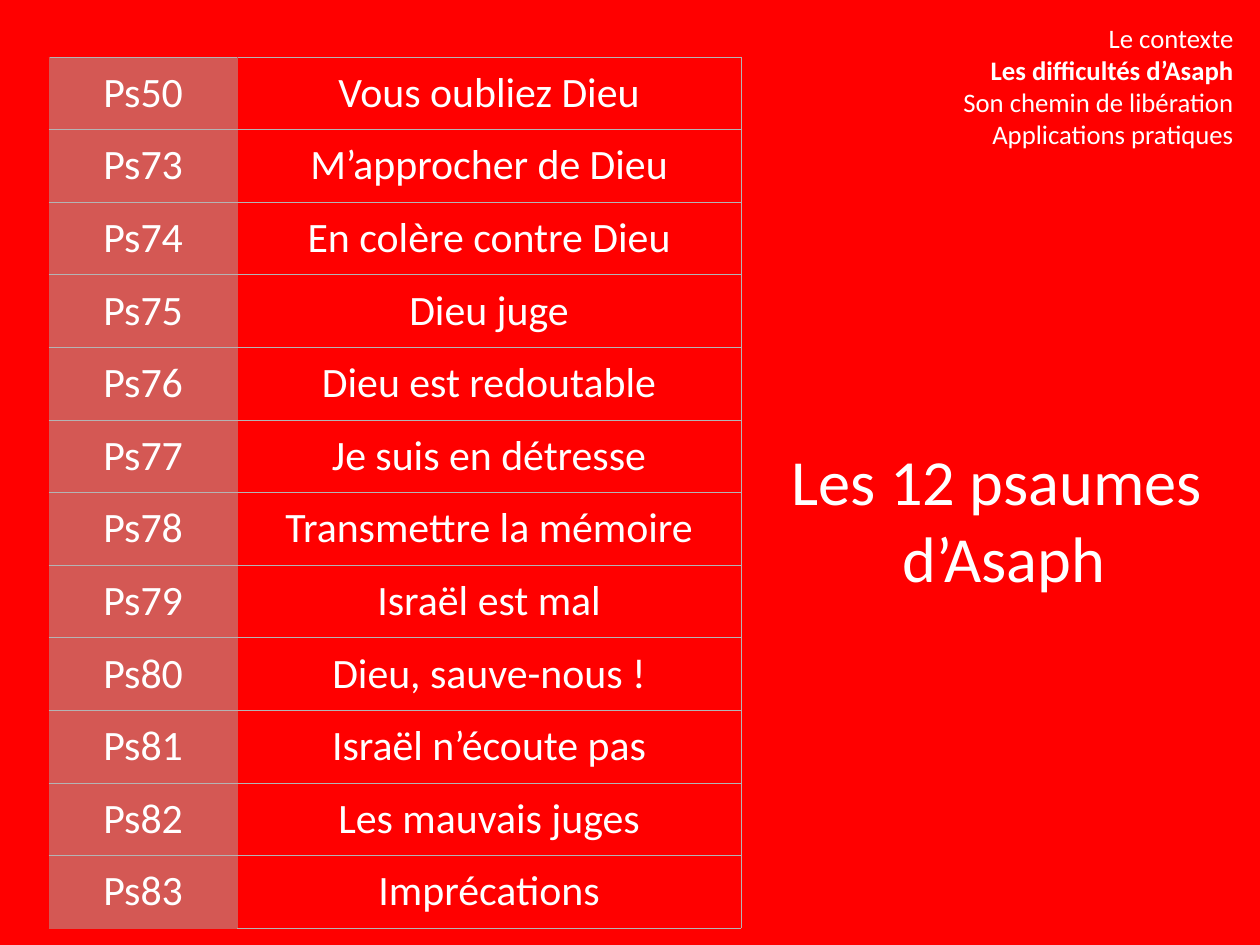
from lxml import etree
from pptx import Presentation
from pptx.dml.color import RGBColor
from pptx.enum.text import MSO_ANCHOR, MSO_AUTO_SIZE, PP_ALIGN
from pptx.oxml.ns import qn
from pptx.util import Inches, Pt

CENTER, RIGHT = PP_ALIGN.CENTER, PP_ALIGN.RIGHT
MIDDLE = MSO_ANCHOR.MIDDLE
NO_AUTOFIT = MSO_AUTO_SIZE.NONE

RED, ROSE, GREY, WHITE = "FF0000", "D45854", "B4B4B4", "FFFFFF"

PSALMS = [
    ("Ps50", "Vous oubliez Dieu"),
    ("Ps73", "M’approcher de Dieu"),
    ("Ps74", "En colère contre Dieu"),
    ("Ps75", "Dieu juge"),
    ("Ps76", "Dieu est redoutable"),
    ("Ps77", "Je suis en détresse"),
    ("Ps78", "Transmettre la mémoire"),
    ("Ps79", "Israël est mal"),
    ("Ps80", "Dieu, sauve-nous !"),
    ("Ps81", "Israël n’écoute pas"),
    ("Ps82", "Les mauvais juges"),
    ("Ps83", "Imprécations"),
]
AGENDA = ["Le contexte", "Les difficultés d’Asaph",
          "Son chemin de libération", "Applications pratiques"]


def rgb(value):
    return RGBColor.from_string(value)


class Deck:
    font = "Calibri"
    color = WHITE

    def __init__(self, width, height):
        self.prs = Presentation()
        self.prs.slide_width = Inches(width)
        self.prs.slide_height = Inches(height)
        self.slide = None

    def add_slide(self, background):
        self.slide = self.prs.slides.add_slide(self.prs.slide_layouts[5])
        fill = self.slide.background.fill
        fill.solid()
        fill.fore_color.rgb = rgb(background)

    def set_lines(self, tf, lines, size, align, bold_line=None):
        """Fill a text frame, one paragraph per line."""
        tf.text = "\n".join(lines)
        for p in tf.paragraphs:
            p.alignment = align
            for r in p.runs:
                r.font.name = self.font
                r.font.size = Pt(size)
                r.font.bold = p.text == bold_line
                r.font.color.rgb = rgb(self.color)

    def place(self, sp, box, lines, size, align, bold_line=None):
        """Position a text shape and set its lines."""
        sp.left, sp.top, sp.width, sp.height = (Inches(v) for v in box)
        tf = sp.text_frame
        tf.word_wrap = True
        tf.auto_size = NO_AUTOFIT
        tf.vertical_anchor = MIDDLE
        tf.margin_left = tf.margin_right = Inches(0.03)
        tf.margin_top = tf.margin_bottom = Inches(0.03)
        self.set_lines(tf, lines, size, align, bold_line)

    def title(self, box, lines, size):
        self.place(self.slide.shapes.title, box, lines, size, CENTER)

    def text(self, box, lines, size, align, bold_line=None):
        sp = self.slide.shapes.add_textbox(0, 0, 0, 0)
        self.place(sp, box, lines, size, align, bold_line)

    def borders(self, cell, colors, width=0.25):
        """Set cell borders; colors are left, right, top, bottom."""
        tc_pr = cell._tc.get_or_add_tcPr()
        for side, color in zip("LRTB", colors):
            ln = etree.SubElement(tc_pr, qn(f"a:ln{side}"), w=str(Pt(width)))
            fill = etree.SubElement(ln, qn("a:solidFill"))
            etree.SubElement(fill, qn("a:srgbClr"), val=color)

    def table(self, left, top, col_widths, row_height, rows, size):
        frame = self.slide.shapes.add_table(
            len(rows), len(col_widths), Inches(left), Inches(top),
            Inches(sum(col_widths)), Inches(row_height * len(rows)))
        table = frame.table
        table.first_row = table.horz_banding = False
        for column, width in zip(table.columns, col_widths):
            column.width = Inches(width)
        for i, values in enumerate(rows):
            table.rows[i].height = Inches(row_height)
            for j, value in enumerate(values):
                cell = table.cell(i, j)
                cell.vertical_anchor = MIDDLE
                cell.margin_left = cell.margin_right = Inches(0.06)
                cell.margin_top = cell.margin_bottom = Inches(0.06)
                self.set_lines(cell.text_frame, [value], size, CENTER)
                if j == 0:
                    bottom = ROSE if i == len(rows) - 1 else GREY
                    self.borders(cell, (ROSE, ROSE, GREY, bottom))
                    cell.fill.solid()
                    cell.fill.fore_color.rgb = rgb(ROSE)
                else:
                    self.borders(cell, (ROSE, GREY, GREY, GREY))
                    cell.fill.background()


def main():
    deck = Deck(14.22, 10.67)
    deck.add_slide(RED)
    deck.title((8.31, 4.98, 6.04, 1.74), ["Les 12 psaumes ", "d’Asaph"], 52.3)
    deck.text((10.41, 0.1, 3.54, 1.74), AGENDA, 21.7, RIGHT, bold_line=AGENDA[1])
    deck.table(0.55, 0.64, (2.13, 5.68), 0.82, PSALMS, 34)
    deck.prs.save("out.pptx")


if __name__ == "__main__":
    main()
